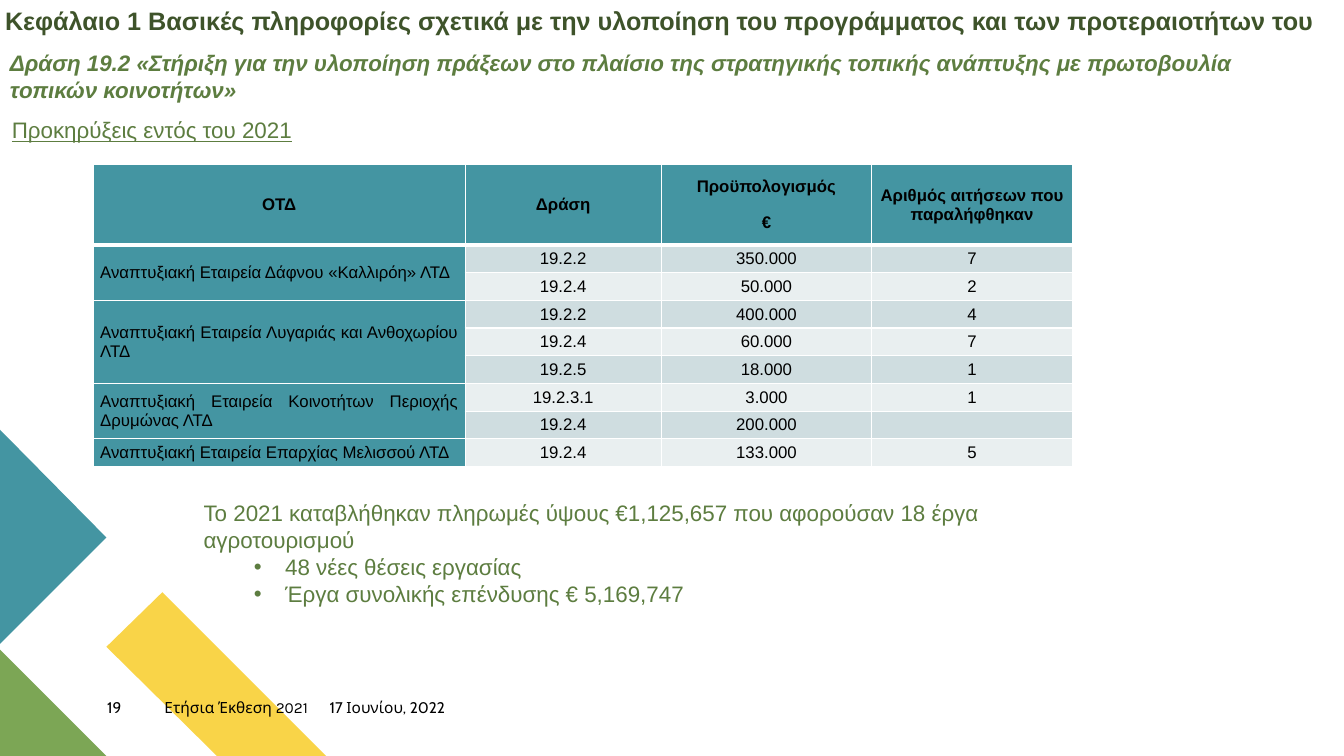
import pptx
import pptx.util
import pptx.dml.color
import pptx.enum.text
import lxml.etree
from dataclasses import dataclass

Pt = pptx.util.Pt
RGB = pptx.dml.color.RGBColor.from_string
ALIGN = pptx.enum.text.PP_ALIGN
ANCHOR = pptx.enum.text.MSO_ANCHOR
A = "http://schemas.openxmlformats.org/drawingml/2006/main"


@dataclass(frozen=True)
class Theme:
    teal: str = "4495A2"
    green: str = "7CA655"
    yellow: str = "F9D448"
    dark: str = "3E532A"
    text: str = "5D7D40"
    black: str = "000000"
    white: str = "FFFFFF"
    bands: tuple = ("CFDDE0", "E9EFF0")
    font: str = "Arial"
    title: int = 18
    body: int = 16
    cell: int = 12
    footer: int = 11


T = Theme()
HEADERS = ["ΟΤΔ", "Δράση", "Προϋπολογισμός\n€", "Αριθμός αιτήσεων που παραλήφθηκαν"]
GROUPS = [
    ("Αναπτυξιακή Εταιρεία Δάφνου «Καλλιρόη» ΛΤΔ",
     [("19.2.2", "350.000", "7"), ("19.2.4", "50.000", "2")]),
    ("Αναπτυξιακή Εταιρεία Λυγαριάς και Ανθοχωρίου ΛΤΔ",
     [("19.2.2", "400.000", "4"), ("19.2.4", "60.000", "7"), ("19.2.5", "18.000", "1")]),
    ("Αναπτυξιακή Εταιρεία Κοινοτήτων Περιοχής Δρυμώνας ΛΤΔ",
     [("19.2.3.1", "3.000", "1"), ("19.2.4", "200.000", "")]),
    ("Αναπτυξιακή Εταιρεία Επαρχίας Μελισσού ΛΤΔ",
     [("19.2.4", "133.000", "5")]),
]


def apply(obj, **values):
    for name, value in values.items():
        setattr(obj, name, value)


def place(sp, x, y, w, h):
    apply(sp, left=Pt(x), top=Pt(y), width=Pt(w), height=Pt(h))


def write(tf, text, size, color, font=T.font, align=ALIGN.LEFT, gap=0, **style):
    """Fill a text frame, one paragraph for each line of text."""
    tf.text = text
    for p in tf.paragraphs:
        apply(p, alignment=align, space_before=Pt(gap), space_after=Pt(gap))
        for r in p.runs:
            apply(r.font, name=font, size=Pt(size), **style)
            r.font.color.rgb = RGB(color)
        if not p.runs:
            p._p.get_or_add_endParaRPr().set("sz", str(size * 100))


def text_box(s, box, text, size, color, margin=None, **style):
    tf = s.shapes.add_textbox(*map(Pt, box)).text_frame
    tf.word_wrap = True
    if margin is not None:
        apply(tf, margin_left=margin, margin_right=margin,
              margin_top=margin, margin_bottom=margin)
    write(tf, text, size, color, **style)


def corner_shapes(s, x, y):
    """Coloured shapes rising from the bottom left corner (x, y)."""
    side, rise = 76.5, 80
    shapes = [
        (T.yellow, [(233.3, 0), (154.8, 0), (side, -78.5), (115.9, -117.4)]),
        (T.green, [(side, 0), (0, 0), (0, -side)]),
        (T.teal, [(0, -rise), (side, -rise - side), (0, -rise - 2 * side)]),
    ]
    for color, points in shapes:
        points = [(x + dx, y + dy) for dx, dy in points]
        fb = s.shapes.build_freeform(*points[0], scale=Pt(1))
        fb.add_line_segments(points[1:], close=True)
        sp = fb.convert_to_shape()
        sp.shadow.inherit = False
        sp.fill.solid()
        sp.fill.fore_color.rgb = RGB(color)
        sp.line.fill.background()


def footer(s, x, y):
    parts = [("19", 41, "Cabin"), ("Ετήσια Έκθεση 2021", 118, "Karla"),
             ("17 Ιουνίου, 2022", 104, "Cabin")]
    for text, w, font in parts:
        text_box(s, (x, y, w, 19.4), text, T.footer, T.black, margin=0, font=font)
        x += w


def headings(s, x, y, w):
    title = s.shapes.title
    place(title, x - 3.6, y, w, 28.8)
    apply(title.text_frame, word_wrap=True, vertical_anchor=ANCHOR.TOP,
          auto_size=pptx.enum.text.MSO_AUTO_SIZE.NONE)
    write(title.text_frame,
          "Κεφάλαιο 1 Βασικές πληροφορίες σχετικά με την υλοποίηση του προγράμματος "
          "και των προτεραιοτήτων του", T.title, T.dark, bold=True)
    text_box(s, (x, y + 31.7, w - 14, 46),
             "Δράση 19.2 «Στήριξη για την υλοποίηση πράξεων στο πλαίσιο της στρατηγικής "
             "τοπικής ανάπτυξης με πρωτοβουλία τοπικών κοινοτήτων»",
             T.body, T.text, bold=True, italic=True)
    text_box(s, (x + 1.4, y + 79.6, 674, 26.6), "Προκηρύξεις εντός του 2021",
             T.body, T.text, underline=True)


def format_cell(cell, text, fill, align=ALIGN.CENTER, bold=False, bottom=1):
    apply(cell, margin_left=Pt(5), margin_right=Pt(5), margin_top=0,
          margin_bottom=0, vertical_anchor=ANCHOR.MIDDLE)
    tcPr = cell._tc.get_or_add_tcPr()
    for edge, width in (("L", 1), ("R", 1), ("T", 1), ("B", bottom)):
        ln = lxml.etree.SubElement(tcPr, f"{{{A}}}ln{edge}", w=str(Pt(width)))
        solid = lxml.etree.SubElement(ln, f"{{{A}}}solidFill")
        lxml.etree.SubElement(solid, f"{{{A}}}srgbClr", val=T.white)
    cell.fill.solid()
    cell.fill.fore_color.rgb = RGB(fill)
    write(cell.text_frame, text, T.cell, T.black, align=align, gap=6, bold=bold)


def calls_table(s, x, y):
    widths, head_h, row_h = [265.7, 140, 150.5, 143.3], 57.4, 19.8
    n = sum(len(rows) for _, rows in GROUPS)
    tbl = s.shapes.add_table(n + 1, len(widths), Pt(x), Pt(y), Pt(sum(widths)),
                             Pt(head_h + n * row_h)).table
    apply(tbl, first_row=False, horz_banding=False)
    for col, w in zip(tbl.columns, widths):
        col.width = Pt(w)
    for i, row in enumerate(tbl.rows):
        row.height = Pt(row_h if i else head_h)
    for c, text in enumerate(HEADERS):
        format_cell(tbl.cell(0, c), text, T.teal, bold=True, bottom=3)
    i = 1
    for name, rows in GROUPS:
        first = i
        for values in rows:
            format_cell(tbl.cell(i, 0), name if i == first else "", T.teal, ALIGN.JUSTIFY)
            for c, value in enumerate(values, 1):
                format_cell(tbl.cell(i, c), value, T.bands[(i - 1) % 2])
            i += 1
        if len(rows) > 1:
            tbl.cell(first, 0).merge(tbl.cell(i - 1, 0))


def payments(s, x, y, w, h):
    sp = s.placeholders[1]
    place(sp, x, y, w, h)
    tf = sp.text_frame
    apply(tf, word_wrap=True, vertical_anchor=ANCHOR.TOP,
          auto_size=pptx.enum.text.MSO_AUTO_SIZE.NONE)
    write(tf, "Το 2021 καταβλήθηκαν πληρωμές ύψους €1,125,657 που αφορούσαν 18 έργα "
          "αγροτουρισμού\n48 νέες θέσεις εργασίας\nΈργα συνολικής επένδυσης € 5,169,747",
          T.body, T.text)
    for i, p in enumerate(tf.paragraphs):
        p.level = min(i, 1)
        pPr = p._p.get_or_add_pPr()
        pPr.set("marL", str(Pt(58.3 if i else 0)))
        pPr.set("indent", str(Pt(-22.3 if i else 0)))
        if i:
            lxml.etree.SubElement(pPr, f"{{{A}}}buFont", typeface=T.font)
            lxml.etree.SubElement(pPr, f"{{{A}}}buChar", char="•")
        else:
            lxml.etree.SubElement(pPr, f"{{{A}}}buNone")


def main():
    prs = pptx.Presentation()
    apply(prs, slide_width=Pt(960), slide_height=Pt(540))
    s = prs.slides.add_slide(prs.slide_layouts[1])
    corner_shapes(s, 0, 540)
    footer(s, 76.5, 498.5)
    headings(s, 0, 0, 960)
    calls_table(s, 66.6, 117.6)
    payments(s, 138.2, 353.2, 638.6, 85)
    prs.save("out.pptx")


if __name__ == "__main__":
    main()
